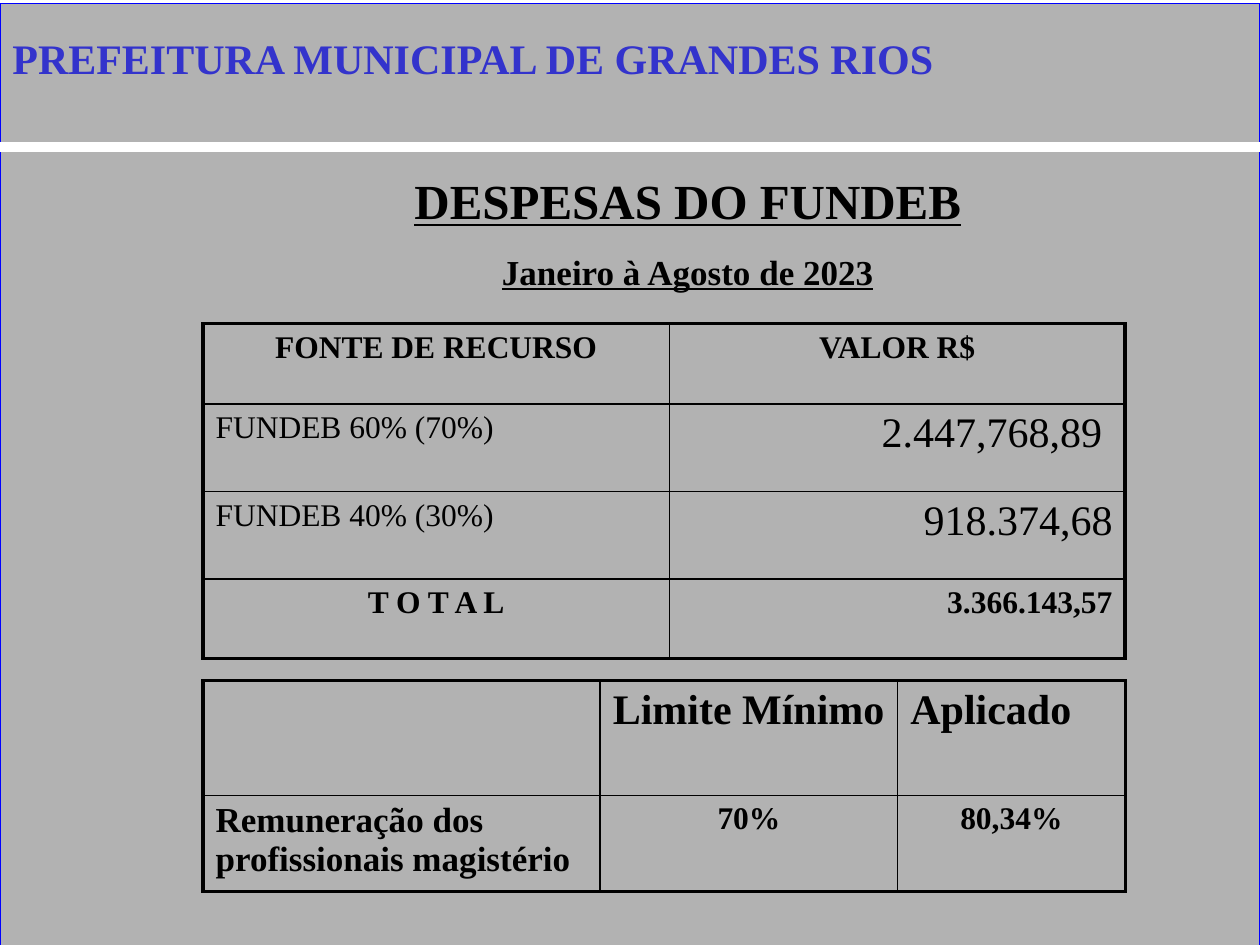
import pptx
import pptx.util
import pptx.dml.color
import pptx.enum.dml
import pptx.enum.shapes
import pptx.enum.text
import pptx.oxml
import pptx.oxml.ns

Pt = pptx.util.Pt
ALIGN = pptx.enum.text.PP_ALIGN
LEFT, CENTER, RIGHT = ALIGN.LEFT, ALIGN.CENTER, ALIGN.RIGHT
FONT = "Times New Roman"
COLORS = {"panel": "B2B2B2", "frame": "0000FF", "rule": "FFFFFF",
          "ink": "000000", "city": "3333CC", "shade": "808080"}

WIDTH, HEIGHT = 720, 540
CITY = "PREFEITURA MUNICIPAL DE GRANDES RIOS"
HEADINGS = [("DESPESAS DO FUNDEB", 28), ("Janeiro à Agosto de 2023", 20)]

SOURCES = {
    "at": (116, 185), "columns": [266.5, 260.5], "rows": [46, 50, 50, 45.5],
    "cells": [
        [("FONTE DE RECURSO", 18, True, CENTER), ("VALOR R$", 18, True, CENTER)],
        [("FUNDEB 60% (70%)", 18, False, LEFT), ("2.447,768,89 ", 24, False, RIGHT)],
        [("FUNDEB 40% (30%)", 18, False, LEFT), ("918.374,68", 24, False, RIGHT)],
        [("T O T A L", 18, True, CENTER), ("3.366.143,57", 18, True, RIGHT)],
    ],
}
LIMITS = {
    "at": (116, 389), "columns": [227, 170, 130], "rows": [65.5, 55],
    "cells": [
        [None, ("Limite Mínimo", 24, True, LEFT), ("Aplicado", 24, True, LEFT)],
        [("Remuneração dos profissionais magistério", 20, True, LEFT),
         ("70%", 18, True, CENTER), ("80,34%", 18, True, CENTER)],
    ],
}
OUTER, INNER = 2.25, 1


def rgb(name):
    return pptx.dml.color.RGBColor.from_string(COLORS[name])


def write(paragraph, text, size, bold, align, color="ink"):
    paragraph.alignment = align
    run = paragraph.add_run()
    run.text = text
    run.font.size = Pt(size)
    run.font.bold = bold
    run.font.name = FONT
    run.font.color.rgb = rgb(color)
    return run


def set_border(cell, side, width):
    border = pptx.oxml.parse_xml(
        f'<a:{side} {pptx.oxml.ns.nsdecls("a")} w="{Pt(width)}"><a:solidFill>'
        f'<a:srgbClr val="{COLORS["ink"]}"/></a:solidFill></a:{side}>')
    cell._tc.get_or_add_tcPr().append(border)


def add_grid(slide, grid):
    columns, rows = grid["columns"], grid["rows"]
    frame = slide.shapes.add_table(
        len(rows), len(columns), *map(Pt, grid["at"]), Pt(sum(columns)), Pt(sum(rows)))
    table = frame.table
    table.first_row = table.horz_banding = False
    for column, width in zip(table.columns, columns):
        column.width = Pt(width)
    for r, height in enumerate(rows):
        table.rows[r].height = Pt(height)
        for c, entry in enumerate(grid["cells"][r]):
            cell = table.cell(r, c)
            edges = {"lnL": c == 0, "lnR": c == len(columns) - 1,
                     "lnT": r == 0, "lnB": r == len(rows) - 1}
            for side, is_outer in edges.items():
                set_border(cell, side, OUTER if is_outer else INNER)
            cell.fill.background()
            if entry:
                write(cell.text_frame.paragraphs[0], *entry)


def add_backdrop(slide):
    panel = slide.shapes.add_shape(
        pptx.enum.shapes.MSO_SHAPE.RECTANGLE, 0, Pt(2), Pt(WIDTH), Pt(HEIGHT))
    panel.shadow.inherit = False
    panel.fill.solid()
    panel.fill.fore_color.rgb = rgb("panel")
    panel.line.color.rgb = rgb("frame")
    panel.line.width = Pt(0.75)
    rule = slide.shapes.add_connector(
        pptx.enum.shapes.MSO_CONNECTOR.STRAIGHT, 0, Pt(84), Pt(WIDTH), Pt(84))
    rule.line.color.rgb = rgb("rule")
    rule.line.width = Pt(6)
    rule._element.spPr.append(
        pptx.oxml.parse_xml(f'<a:effectLst {pptx.oxml.ns.nsdecls("a")}/>'))
    for shape in (rule, panel):
        slide.shapes._spTree.insert(2, shape._element)


def add_headings(slide):
    title = slide.shapes.title
    title.left, title.top, title.width, title.height = map(Pt, (102, 77, 582, 397))
    frame = title.text_frame
    frame.word_wrap = True
    frame.vertical_anchor = pptx.enum.text.MSO_ANCHOR.TOP
    frame.auto_size = pptx.enum.text.MSO_AUTO_SIZE.NONE
    for index, (text, size) in enumerate(HEADINGS):
        paragraph = frame.add_paragraph() if index else frame.paragraphs[0]
        paragraph.line_spacing = 1.5
        write(paragraph, text, size, True, CENTER).font.underline = True
        properties = paragraph._p.get_or_add_pPr()
        properties.set("marL", str(Pt(36)))
        properties.set("indent", str(-Pt(36)))


def add_city(slide):
    city = slide.shapes.add_textbox(0, Pt(15), Pt(683), Pt(36))
    city.text_frame.word_wrap = True
    paragraph = city.text_frame.paragraphs[0]
    paragraph.space_before = Pt(3)
    run = write(paragraph, CITY, 24, True, LEFT, "city")
    shadow = pptx.oxml.parse_xml(
        f'<a:effectLst {pptx.oxml.ns.nsdecls("a")}>'
        f'<a:outerShdw dist="{Pt(2)}" dir="2700000"><a:srgbClr val="{COLORS["shade"]}"/>'
        '</a:outerShdw></a:effectLst>')
    run.font.fill._xPr.find(pptx.oxml.ns.qn("a:solidFill")).addnext(shadow)


def main():
    deck = pptx.Presentation()
    deck.slide_width, deck.slide_height = Pt(WIDTH), Pt(HEIGHT)
    slide = deck.slides.add_slide(deck.slide_layouts[5])
    add_backdrop(slide)
    add_headings(slide)
    for grid in (SOURCES, LIMITS):
        add_grid(slide, grid)
    add_city(slide)
    deck.save("out.pptx")


if __name__ == "__main__":
    main()
